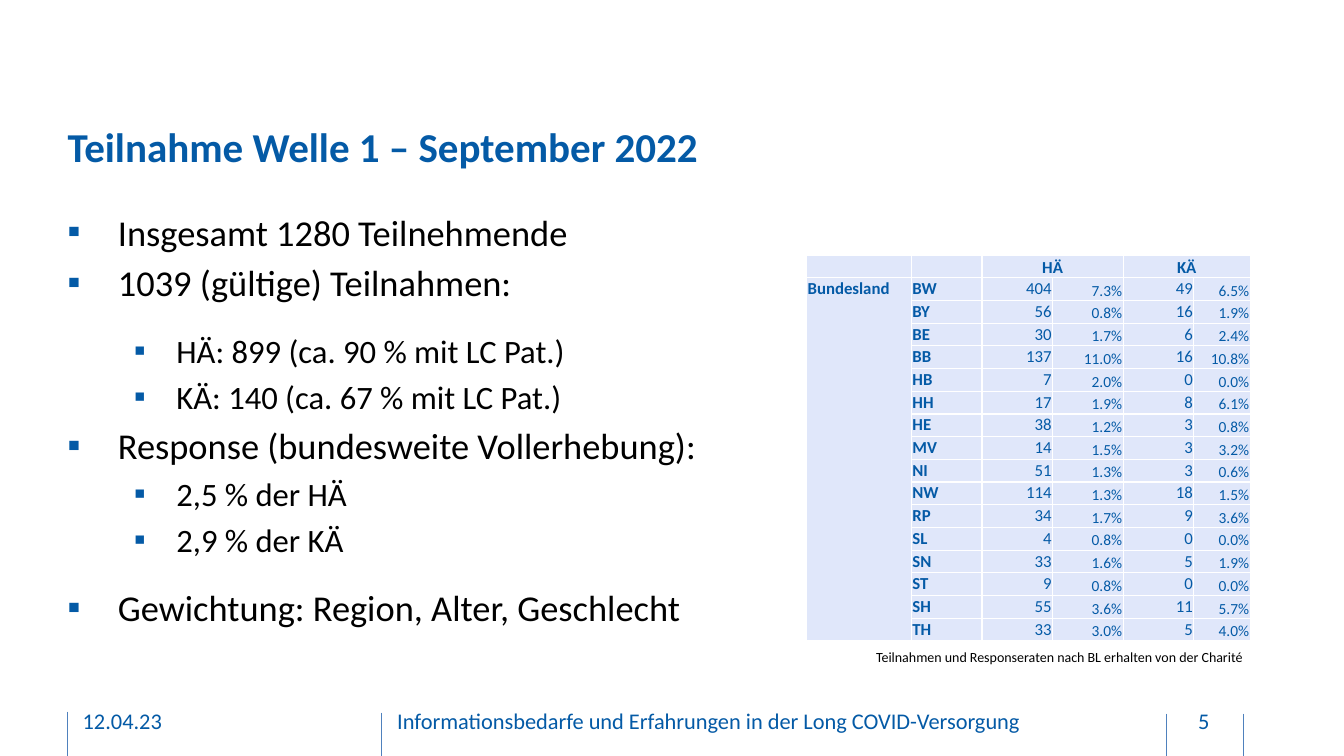
from dataclasses import dataclass
from typing import Optional

import lxml.etree
import pptx
import pptx.dml.color
import pptx.enum.shapes
import pptx.enum.text
import pptx.oxml.ns
import pptx.util

EMU_PER_PX = 9144  # 100 px to the inch
FONT = "Calibri"
COLORS = {"blue": "045AA6", "black": "000000", "cell": "E0E7FA",
          "border": "FFFFFF", "rule": "4F81BD"}
ALIGN = pptx.enum.text.PP_ALIGN
ANCHOR = pptx.enum.text.MSO_ANCHOR


@dataclass
class Label:
    text: str
    left: int
    top: int
    width: int
    height: int
    size: float
    color: str = "blue"
    bold: bool = False
    align: ALIGN = ALIGN.LEFT


@dataclass
class Bullet:
    text: str
    level: int = 0
    before: int = 5


@dataclass
class Level:
    size: float
    margin: int
    hanging: int


@dataclass
class CellStyle:
    size: int = 12
    bold: bool = False
    align: ALIGN = ALIGN.LEFT
    anchor: ANCHOR = ANCHOR.TOP


@dataclass
class Rule:
    x: int
    top: int
    bottom: int


TITLE = Label("Teilnahme Welle 1 – September 2022", 67, 93, 1164, 104, 29.3, bold=True)
FOOTERS = [
    Label("12.04.23", 82, 695, 271, 40, 16),
    Label("Informationsbedarfe und Erfahrungen in der Long COVID-Versorgung",
          394, 695, 650, 40, 16),
    Label("5", 1158, 695, 72, 40, 16, align=ALIGN.CENTER),
]
CAPTION = Label("Teilnahmen und Responseraten nach BL erhalten von der Charité",
                859, 638, 391, 27, 10, "black")
RULES = [Rule(67, 706, 750), Rule(378, 707, 750), Rule(1157, 708, 750), Rule(1233, 708, 750)]

LEVELS = [Level(26, 50, 50), Level(23.3, 108, 42)]
BULLETS = [
    Bullet("Insgesamt 1280 Teilnehmende", before=0),
    Bullet("1039 (gültige) Teilnahmen:"),
    Bullet("HÄ: 899 (ca. 90 % mit LC Pat.)", 1, before=19),
    Bullet("KÄ: 140 (ca. 67 % mit LC Pat.)", 1),
    Bullet("Response (bundesweite Vollerhebung):"),
    Bullet("2,5 % der HÄ", 1),
    Bullet("2,9 % der KÄ", 1),
    Bullet("Gewichtung: Region, Alter, Geschlecht", before=19),
]

COLUMN_WIDTHS = [104, 70, 70, 70, 70, 56]
STATES = [
    ("BW", "404", "7.3%", "49", "6.5%"),
    ("BY", "56", "0.8%", "16", "1.9%"),
    ("BE", "30", "1.7%", "6", "2.4%"),
    ("BB", "137", "11.0%", "16", "10.8%"),
    ("HB", "7", "2.0%", "0", "0.0%"),
    ("HH", "17", "1.9%", "8", "6.1%"),
    ("HE", "38", "1.2%", "3", "0.8%"),
    ("MV", "14", "1.5%", "3", "3.2%"),
    ("NI", "51", "1.3%", "3", "0.6%"),
    ("NW", "114", "1.3%", "18", "1.5%"),
    ("RP", "34", "1.7%", "9", "3.6%"),
    ("SL", "4", "0.8%", "0", "0.0%"),
    ("SN", "33", "1.6%", "5", "1.9%"),
    ("ST", "9", "0.8%", "0", "0.0%"),
    ("SH", "55", "3.6%", "11", "5.7%"),
    ("TH", "33", "3.0%", "5", "4.0%"),
]
HEADER = CellStyle(bold=True, align=ALIGN.CENTER, anchor=ANCHOR.BOTTOM)
NAME = CellStyle(bold=True)
COUNT = CellStyle(align=ALIGN.RIGHT)
RATE = CellStyle(size=11, align=ALIGN.RIGHT, anchor=ANCHOR.BOTTOM)
COLUMN_STYLES = [NAME, NAME, COUNT, RATE, COUNT, RATE]


def px(length: int) -> int:
    return pptx.util.Emu(length * EMU_PER_PX)


def rgb(name: str) -> pptx.dml.color.RGBColor:
    return pptx.dml.color.RGBColor.from_string(COLORS[name])


def add_element(parent, tag: str, **attributes: str):
    return lxml.etree.SubElement(parent, pptx.oxml.ns.qn(tag), attributes)


def add_span(para, text: str, size: float, color: str, bold: bool = False) -> None:
    span = para.add_run()
    span.text = text
    span.font.name = FONT
    span.font.size = pptx.util.Pt(size)
    span.font.bold = bold
    span.font.color.rgb = rgb(color)


def add_frame(page, left: int, top: int, width: int, height: int, inset: int = 0):
    box = page.shapes.add_textbox(px(left), px(top), px(width), px(height))
    frame = box.text_frame
    frame.word_wrap = True
    frame.margin_left = frame.margin_right = px(0)
    frame.margin_top = frame.margin_bottom = px(inset)
    return frame


def add_label(page, label: Label, inset: int = 0):
    frame = add_frame(page, label.left, label.top, label.width, label.height, inset)
    frame.vertical_anchor = ANCHOR.MIDDLE
    para = frame.paragraphs[0]
    para.alignment = label.align
    add_span(para, label.text, label.size, label.color, label.bold)
    return frame


def add_rule(page, rule: Rule) -> None:
    line = page.shapes.add_connector(pptx.enum.shapes.MSO_CONNECTOR.STRAIGHT,
                                     px(rule.x), px(rule.top), px(rule.x), px(rule.bottom))
    line.line.color.rgb = rgb("rule")
    line.line.width = pptx.util.Pt(0.5)
    add_element(line._element.spPr, "a:effectLst")


def add_bullets(page) -> None:
    frame = add_frame(page, 67, 208, 637, 472)
    for index, bullet in enumerate(BULLETS):
        para = frame.add_paragraph() if index else frame.paragraphs[0]
        level = LEVELS[bullet.level]
        para.level = bullet.level
        para.space_before = pptx.util.Pt(bullet.before)
        properties = para._p.get_or_add_pPr()
        properties.set("marL", str(px(level.margin)))
        properties.set("indent", str(-px(level.hanging)))
        color = add_element(properties, "a:buClr")
        add_element(color, "a:srgbClr", val=COLORS["blue"])
        add_element(properties, "a:buFont", typeface=FONT)
        add_element(properties, "a:buChar", char="▪")
        add_span(para, bullet.text, level.size, "black")


def style_cell(cell, style: CellStyle, text: Optional[str]) -> None:
    properties = cell._tc.get_or_add_tcPr()
    for side in ("L", "R", "T", "B"):
        border = add_element(properties, f"a:ln{side}", w=str(pptx.util.Pt(1)))
        fill = add_element(border, "a:solidFill")
        add_element(fill, "a:srgbClr", val=COLORS["border"])
    cell.fill.solid()
    cell.fill.fore_color.rgb = rgb("cell")
    cell.margin_left = cell.margin_right = cell.margin_top = px(1)
    cell.margin_bottom = px(0)
    cell.vertical_anchor = style.anchor
    para = cell.text_frame.paragraphs[0]
    para.alignment = style.align
    if text:
        add_span(para, text, style.size, "blue", style.bold)
    else:  # keeps empty cells from stretching their row
        add_element(para._p, "a:endParaRPr", sz=str(style.size * 100))


def add_state_table(page) -> None:
    rows = [(None, None, "HÄ", None, "KÄ", None)]
    rows += [("Bundesland" if index == 0 else None, *state)
             for index, state in enumerate(STATES)]
    table = page.shapes.add_table(len(rows), len(COLUMN_WIDTHS), px(800), px(253),
                                  px(sum(COLUMN_WIDTHS)), px(383)).table
    table.first_row = table.horz_banding = False
    for column, width in zip(table.columns, COLUMN_WIDTHS):
        column.width = px(width)
    for row_index, row in enumerate(rows):
        table.rows[row_index].height = px(383) // len(rows)
        for column_index, text in enumerate(row):
            style = COLUMN_STYLES[column_index] if row_index else HEADER
            style_cell(table.cell(row_index, column_index), style, text)
    for first, last in (((0, 2), (0, 3)), ((0, 4), (0, 5)), ((1, 0), (len(STATES), 0))):
        table.cell(*first).merge(table.cell(*last))


def main() -> None:
    deck = pptx.Presentation()
    deck.slide_width, deck.slide_height = px(1333), px(750)
    page = deck.slides.add_slide(deck.slide_layouts[6])

    # Footer rules, title and footer
    for rule in RULES:
        add_rule(page, rule)
    add_label(page, TITLE)
    for footer in FOOTERS:
        add_label(page, footer, inset=5)

    # Findings on the left
    add_bullets(page)

    # Table and its caption on the right
    caption = add_label(page, CAPTION, inset=5)
    caption.margin_left = caption.margin_right = px(10)
    caption.word_wrap = False
    caption.vertical_anchor = ANCHOR.TOP
    add_state_table(page)

    deck.save("out.pptx")


if __name__ == "__main__":
    main()
